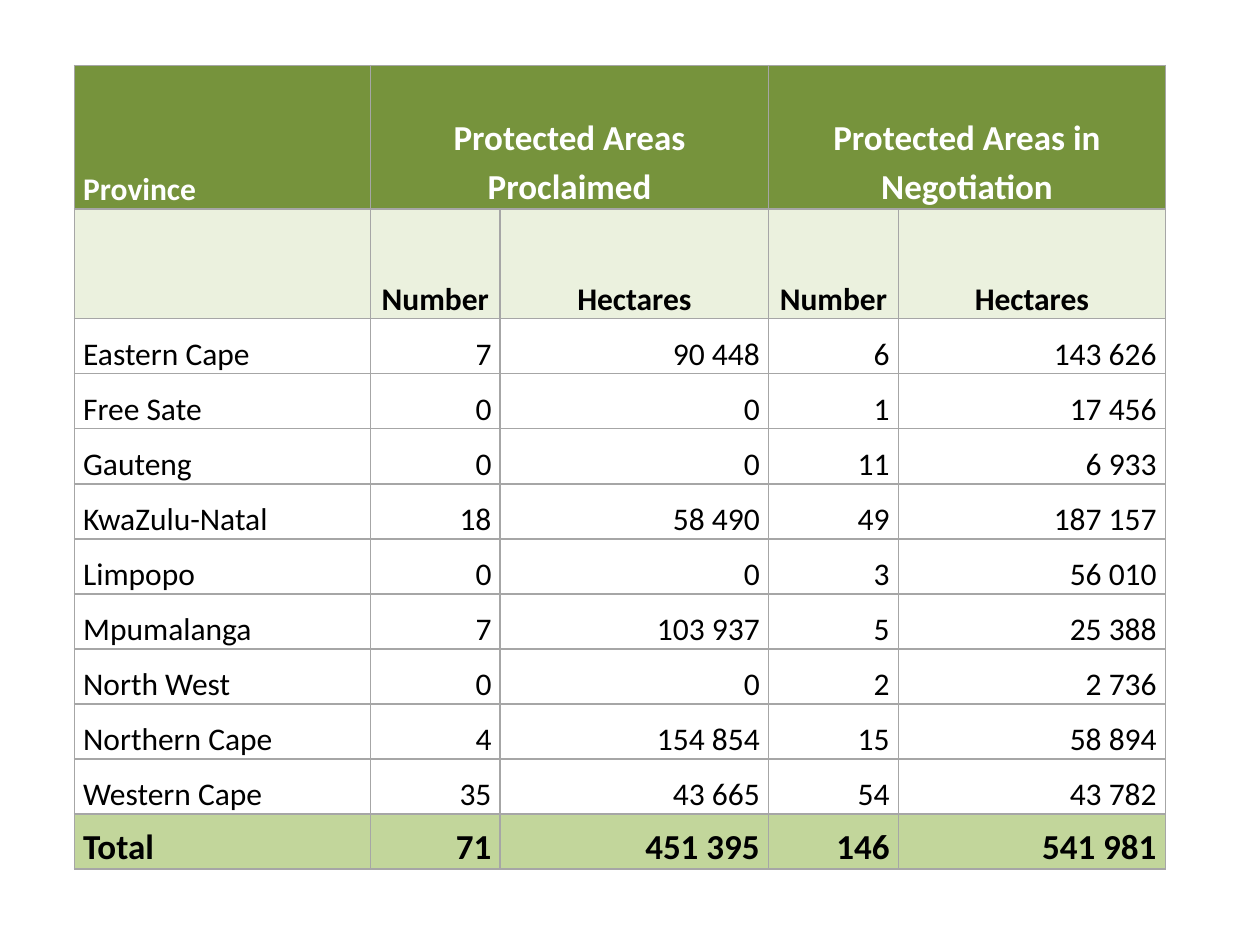
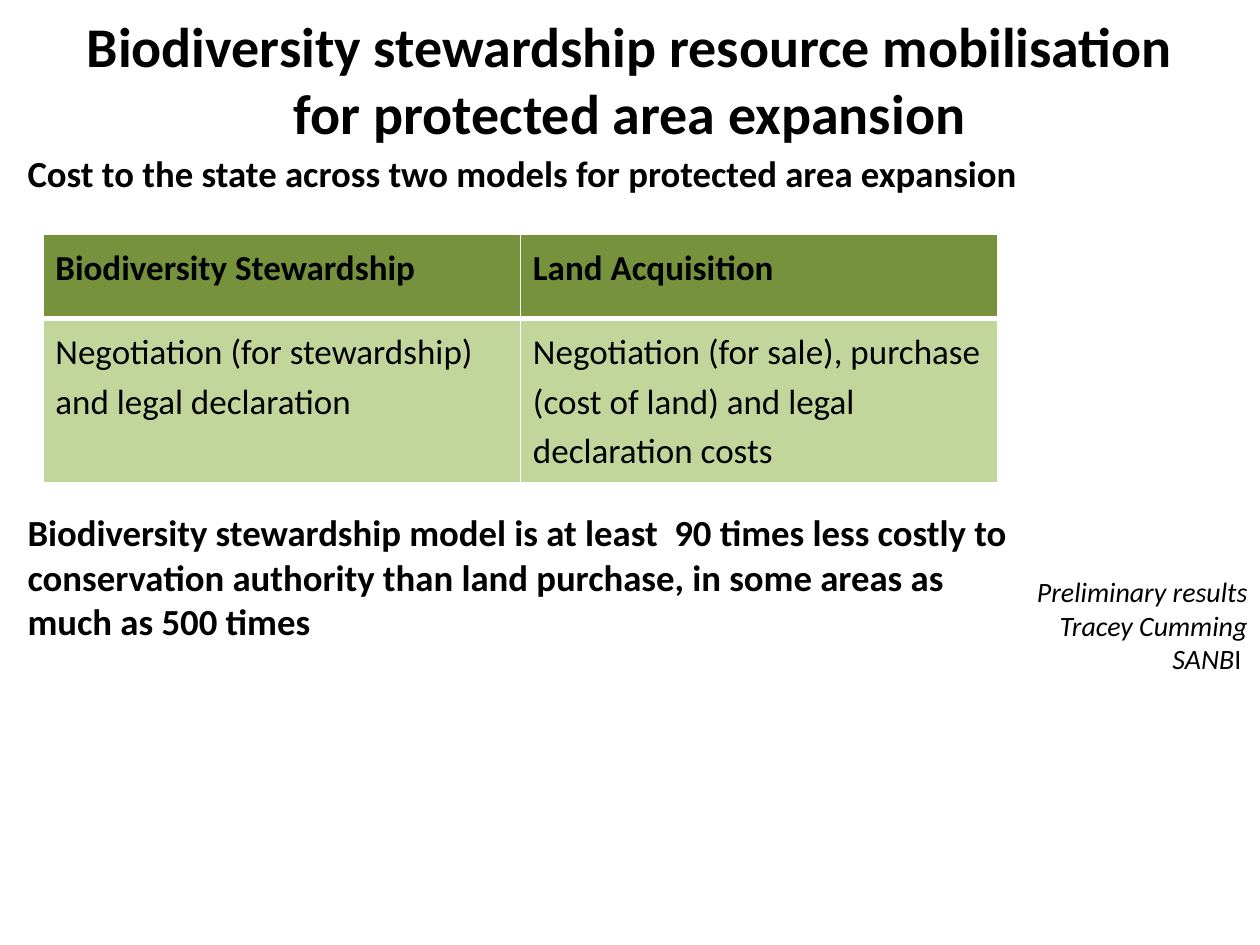
import pptx
import pptx.dml.color
import pptx.enum.text
import pptx.oxml
import pptx.util
from pptx.oxml.ns import nsdecls

RGBColor = pptx.dml.color.RGBColor
Align = pptx.enum.text.PP_ALIGN
Anchor = pptx.enum.text.MSO_ANCHOR

BLACK = RGBColor(0x00, 0x00, 0x00)
WHITE = RGBColor(0xFF, 0xFF, 0xFF)
GREY = RGBColor(0xA6, 0xA6, 0xA6)
HEADER_GREEN = RGBColor(0x76, 0x93, 0x3C)
MODEL_GREEN = RGBColor(0x76, 0x92, 0x3C)
LIGHT_GREEN = RGBColor(0xC2, 0xD6, 0x9B)
PALE_GREEN = RGBColor(0xEB, 0xF1, 0xDE)

FONT = "Calibri"
TITLE_ONLY, BLANK = 5, 6
COLUMNS, ROWS = 100, 75  # the slide grid, a tenth of an inch each way

PROVINCES = [
    ("Eastern Cape", "7", "90 448", "6", "143 626"),
    ("Free Sate", "0", "0", "1", "17 456"),
    ("Gauteng", "0", "0", "11", "6 933"),
    ("KwaZulu-Natal", "18", "58 490", "49", "187 157"),
    ("Limpopo", "0", "0", "3", "56 010"),
    ("Mpumalanga", "7", "103 937", "5", "25 388"),
    ("North West", "0", "0", "2", "2 736"),
    ("Northern Cape", "4", "154 854", "15", "58 894"),
    ("Western Cape", "35", "43 665", "54", "43 782"),
]
TOTAL = ("Total", "71", "451 395", "146", "541 981")
GROUPS = ("Province", "Protected Areas Proclaimed", "", "Protected Areas in Negotiation", "")
MEASURES = ("", "Number", "Hectares", "Number", "Hectares")
MODELS = ("Biodiversity Stewardship", "Land Acquisition")
MODEL_COSTS = (
    "Negotiation (for stewardship) and legal declaration",
    "Negotiation (for sale), purchase (cost of land) and legal declaration costs",
)


def grid(cells):
    return pptx.util.Inches(cells / 10)


def format_text(frame, size, color=BLACK, bold=False, italic=False, align=Align.LEFT, spacing=None):
    for para in frame.paragraphs:
        para.alignment = align
        para.line_spacing = spacing
        for span in para.runs:
            font = span.font
            font.name, font.size = FONT, pptx.util.Pt(size)
            font.bold, font.italic = bold, italic
            font.color.rgb = color


def add_title(page, text, left, top, width, height):
    title = page.shapes.title
    title.left, title.top, title.width, title.height = map(grid, (left, top, width, height))
    frame = title.text_frame
    frame.text = text
    frame.auto_size = pptx.enum.text.MSO_AUTO_SIZE.NONE
    frame.vertical_anchor = Anchor.MIDDLE
    format_text(frame, 32, bold=True, align=Align.CENTER)


def add_text(page, lines, left, top, width, height, anchor=Anchor.TOP, **style):
    box = page.shapes.add_textbox(*map(grid, (left, top, width, height)))
    frame = box.text_frame
    frame.word_wrap = True
    frame.vertical_anchor = anchor
    frame.text = "\n".join(lines)
    format_text(frame, **style)
    return frame


def add_table(page, left, top, widths, heights):
    frame = page.shapes.add_table(
        len(heights), len(widths), *map(grid, (left, top, sum(widths), sum(heights))))
    table = frame.table
    for column, width in zip(table.columns, widths):
        column.width = grid(width)
    for row, height in zip(table.rows, heights):
        row.height = grid(height)
    return table


def set_borders(cell, color, left=1, right=1, top=1, bottom=1):
    """Draw the four cell edges, widths in points, ahead of the fill as the schema asks."""
    properties = cell._tc.get_or_add_tcPr()
    for place, (side, width) in enumerate(zip("LRTB", (left, right, top, bottom))):
        properties.insert(place, pptx.oxml.parse_xml(
            f'<a:ln{side} {nsdecls("a")} w="{pptx.util.Pt(width)}"><a:solidFill>'
            f'<a:srgbClr val="{color}"/></a:solidFill></a:ln{side}>'))


def fill_cell(cell, text, fill=None, **style):
    cell.text = text
    if fill is None:
        cell.fill.background()
    else:
        cell.fill.solid()
        cell.fill.fore_color.rgb = fill
    format_text(cell.text_frame, spacing=1.15, **style)


def add_province_table(page):
    group_height, measure_height, table_height = 11.4, 8.7, 63.8
    rows = [GROUPS, MEASURES, *PROVINCES, TOTAL]
    line_height = (table_height - group_height - measure_height) / (len(rows) - 2)
    heights = [group_height, measure_height] + [line_height] * (len(rows) - 2)
    table = add_table(page, 5.9, 5.2, [23.5, 10.3, 21.3, 10.3, 21.2], heights)

    line_styles = [dict(fill=HEADER_GREEN, size=20, color=WHITE, bold=True),
                   dict(fill=PALE_GREEN, size=18, bold=True)]
    line_styles += [dict(size=18)] * len(PROVINCES)
    line_styles.append(dict(fill=LIGHT_GREEN, size=20, bold=True))

    for row, (texts, style) in enumerate(zip(rows, line_styles)):
        number_align = Align.CENTER if row < 2 else Align.RIGHT
        for column, text in enumerate(texts):
            cell = table.cell(row, column)
            fill_cell(cell, text, align=number_align if column else Align.LEFT, **style)
            set_borders(cell, GREY)
            cell.vertical_anchor = Anchor.BOTTOM
            cell.margin_left = cell.margin_right = grid(0.7)
            cell.margin_top = cell.margin_bottom = 0
    format_text(table.cell(0, 0).text_frame, 18, WHITE, bold=True, spacing=1.15)
    for column in (1, 3):
        table.cell(0, column).merge(table.cell(0, column + 1))


def add_model_table(page):
    table = add_table(page, 3.4, 18.6, [37.9] * 2, [6.7, 13])
    for column, (model, cost) in enumerate(zip(MODELS, MODEL_COSTS)):
        header, body = table.cell(0, column), table.cell(1, column)
        fill_cell(header, model, MODEL_GREEN, size=20, bold=True)
        fill_cell(body, cost, LIGHT_GREEN, size=20)
        set_borders(header, WHITE, bottom=3)
        set_borders(body, WHITE, top=3)


def add_cost_page(deck):
    page = deck.slides.add_slide(deck.slide_layouts[TITLE_ONLY])
    add_title(page, "Biodiversity stewardship resource mobilisation for protected area expansion",
              5, 0, 90, 12.5)
    findings = add_text(page, [
        "Cost to the state across two models for protected area expansion",
        "Biodiversity stewardship model is at least  90 times less costly to conservation "
        "authority than land purchase, in some areas as much as 500 times",
    ], 1.2, 11.5, 81.1, 49.8, size=21, bold=True)
    findings.paragraphs[0].space_before = pptx.util.Pt(4.2)
    findings.paragraphs[1].space_before = pptx.util.Pt(180)  # room for the table
    credit = add_text(page, ["Preliminary results", "Tracey Cumming", "SANB"],
                      79.1, 44.6, 20.9, 10, Anchor.MIDDLE,
                      size=16, italic=True, align=Align.RIGHT)
    upright = credit.paragraphs[-1].add_run()
    upright.text = "I "
    upright.font.name, upright.font.size = FONT, pptx.util.Pt(16)
    upright.font.color.rgb = BLACK
    add_model_table(page)


def main():
    deck = pptx.Presentation()
    deck.slide_width, deck.slide_height = grid(COLUMNS), grid(ROWS)
    add_province_table(deck.slides.add_slide(deck.slide_layouts[BLANK]))
    add_cost_page(deck)
    deck.save("out.pptx")


if __name__ == "__main__":
    main()
